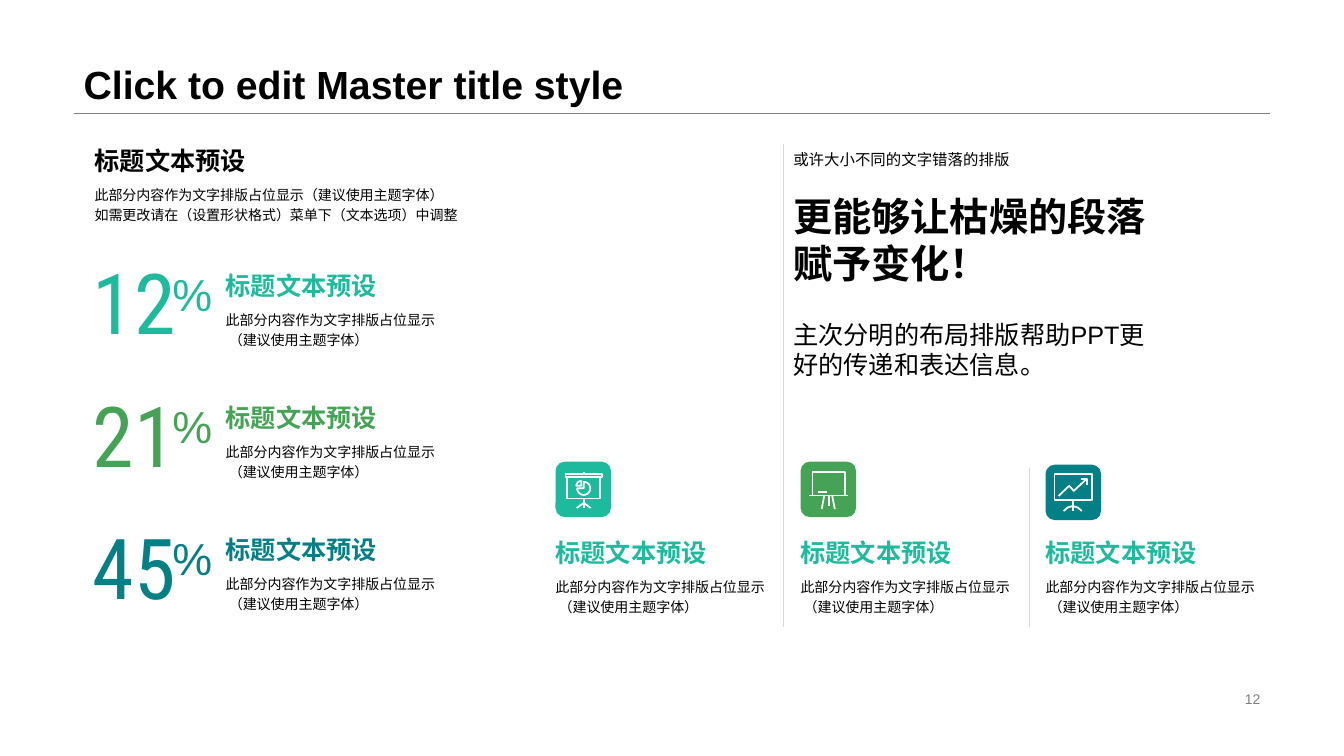
from copy import deepcopy
from math import cos, radians, sin

from lxml.etree import SubElement
from pptx import Presentation
from pptx.dml.color import RGBColor
from pptx.enum.shapes import MSO_CONNECTOR as Connector, MSO_SHAPE as Shape
from pptx.enum.text import MSO_ANCHOR as Anchor, PP_ALIGN as Align
from pptx.oxml.ns import qn
from pptx.util import Inches, Pt

BLACK, GREY, PALE, WHITE = "000000", "808080", "D9D9D9", "FFFFFF"
MINT, GREEN, TEAL = "1EBA9D", "44A354", "037F86"
HEADING = "标题文本预设"
DETAIL = "此部分内容作为文字排版占位显示\n （建议使用主题字体）"


def paint(target, color):
    if hasattr(target, "solid"):
        target.solid()
        target = target.fore_color
    target.rgb = RGBColor.from_string(color)


def write(frame, text, size=10, color=BLACK, bold=False, font="Arial",
          spacing=1.0, align=Align.LEFT, anchor=Anchor.TOP, inset=(0.1, 0.05)):
    frame.word_wrap = True
    frame.vertical_anchor = anchor
    frame.margin_left = frame.margin_right = Inches(inset[0])
    frame.margin_top = frame.margin_bottom = Inches(inset[1])
    paragraph = frame.paragraphs[0]
    paragraph.text = text
    paragraph.alignment = align
    paragraph.line_spacing = spacing
    for run in paragraph.runs:
        run.font.size = Pt(size)
        run.font.bold = bold
        run.font.name = font
        paint(run.font.color, color)
    for line_break in paragraph._p.findall(qn("a:br")):
        line_break.append(deepcopy(paragraph.runs[0]._r.rPr))


def arc(cx, cy, radius, start, end, steps=18):
    angles = [radians(start + (end - start) * i / steps) for i in range(steps + 1)]
    return [(cx + radius * cos(a), cy + radius * sin(a)) for a in angles]


PIE_SCREEN = [
    [(100, 120), (460, 120), (460, 155), (100, 155), (100, 120)],
    [(115, 155), (115, 365), (445, 365), (445, 155)],
    [(280, 120), (280, 105)],
    [(280, 365), (280, 460)],
    [(210, 460), (280, 410), (350, 460)],
    [(280, 265)] + arc(280, 265, 65, -90, 180) + [(280, 265)],
    [(255, 240)] + arc(255, 240, 48, 180, 270) + [(255, 240)],
]
EASEL = [
    [(120, 335), (120, 100), (440, 100), (440, 335)],
    [(80, 335), (470, 335)],
    [(170, 300), (260, 300)],
    [(235, 340), (210, 470)],
    [(280, 340), (280, 440)],
    [(315, 340), (340, 470)],
]
TREND_SCREEN = [
    [(90, 90), (460, 90), (460, 350), (90, 350), (90, 90)],
    [(130, 310), (235, 210), (280, 260), (410, 140)],
    [(350, 140), (410, 140), (410, 200)],
    [(270, 350), (270, 460)],
    [(180, 460), (220, 425), (270, 410), (320, 425), (360, 460)],
]


class SlideBuilder:
    def __init__(self, slide):
        self.slide = slide
        self.shapes = slide.shapes

    def title(self, text, left, top, width, height):
        title = self.shapes.title
        title.left, title.top = Inches(left), Inches(top)
        title.width, title.height = Inches(width), Inches(height)
        write(title.text_frame, text, size=28, bold=True, spacing=0.9, anchor=Anchor.BOTTOM)

    def text(self, text, left, top, width, height, **style):
        box = self.shapes.add_textbox(Inches(left), Inches(top), Inches(width), Inches(height))
        write(box.text_frame, text, **style)

    def entry(self, heading, detail, left, top, width, color=BLACK, side=0.1):
        self.text(heading, left, top, width, 0.38, size=18, color=color,
                  bold=True, inset=(side, 0.05))
        self.text(detail, left, top + 0.38, width, 0.61, spacing=1.2, inset=(side, 0.05))

    def statistic(self, number, top, color):
        style = dict(color=color, anchor=Anchor.MIDDLE, inset=(0, 0))
        self.text(number, 0.92, top, 1.05, 1.1, size=60, font="Roboto Condensed", **style)
        self.text("%", 1.71, top + 0.2, 0.4, 0.54, size=32, **style)
        self.entry(HEADING, DETAIL, 2.14, top + 0.19, 2.89, color)

    def line(self, x1, y1, x2, y2, color):
        rule = self.shapes.add_connector(
            Connector.STRAIGHT, Inches(x1), Inches(y1), Inches(x2), Inches(y2))
        paint(rule.line.fill, color)
        rule.line.width = Pt(0.25)
        SubElement(rule._element.spPr, qn("a:effectLst"))

    def icon(self, strokes, left, top, color):
        tile = self.shapes.add_shape(
            Shape.ROUNDED_RECTANGLE, Inches(left), Inches(top), Inches(0.55), Inches(0.55))
        tile.shadow.inherit = False
        paint(tile.fill, color)
        tile.line.fill.background()

        first, *others = strokes
        outline = self.shapes.build_freeform(*first[0], scale=Inches(0.001))
        outline.add_line_segments(first[1:], close=False)
        for stroke in others:
            outline.move_to(*stroke[0])
            outline.add_line_segments(stroke[1:], close=False)
        drawing = outline.convert_to_shape(Inches(left), Inches(top))
        drawing.shadow.inherit = False
        drawing.fill.background()
        paint(drawing.line.fill, WHITE)
        drawing.line.width = Pt(1.25)


def main():
    deck = Presentation()
    deck.slide_width, deck.slide_height = Inches(13.33), Inches(7.5)
    page = SlideBuilder(deck.slides.add_slide(deck.slide_layouts[5]))

    page.line(0.73, 1.12, 12.6, 1.12, GREY)
    page.title("Click to edit Master title style", 0.73, 0, 11.87, 1.12)
    page.text("12", 9.42, 6.82, 3.18, 0.23, color=GREY, align=Align.RIGHT, anchor=Anchor.MIDDLE)

    page.entry(HEADING, "此部分内容作为文字排版占位显示（建议使用主题字体）\n"
               "如需更改请在（设置形状格式）菜单下（文本选项）中调整", 0.84, 1.39, 4.04)
    for row, (number, color) in enumerate([("12", MINT), ("21", GREEN), ("45", TEAL)]):
        page.statistic(number, 2.44 + 1.31 * row, color)

    message = [
        ("或许大小不同的文字错落的排版", 1.43, 0.3, 11, False),
        ("更能够让枯燥的段落赋予变化！", 1.73, 1.28, 28, True),
        ("主次分明的布局排版帮助PPT更好的传递和表达信息。", 3.01, 0.91, 18, False),
    ]
    for text, top, height, size, bold in message:
        page.text(text, 7.77, top, 3.83, height, size=size, bold=bold, anchor=Anchor.MIDDLE)

    features = [(PIE_SCREEN, 4.58, MINT), (EASEL, 4.58, GREEN), (TREND_SCREEN, 4.61, TEAL)]
    for column, (strokes, top, color) in enumerate(features):
        left = 5.51 + 2.43 * column
        page.icon(strokes, left, top, color)
        page.entry(HEADING, DETAIL, left, 5.28, 2.1, MINT, side=0)

    for x, top in [(7.77, 1.43), (10.21, 4.64)]:
        page.line(x, top, x, 6.22, PALE)

    deck.save("out.pptx")


if __name__ == "__main__":
    main()
